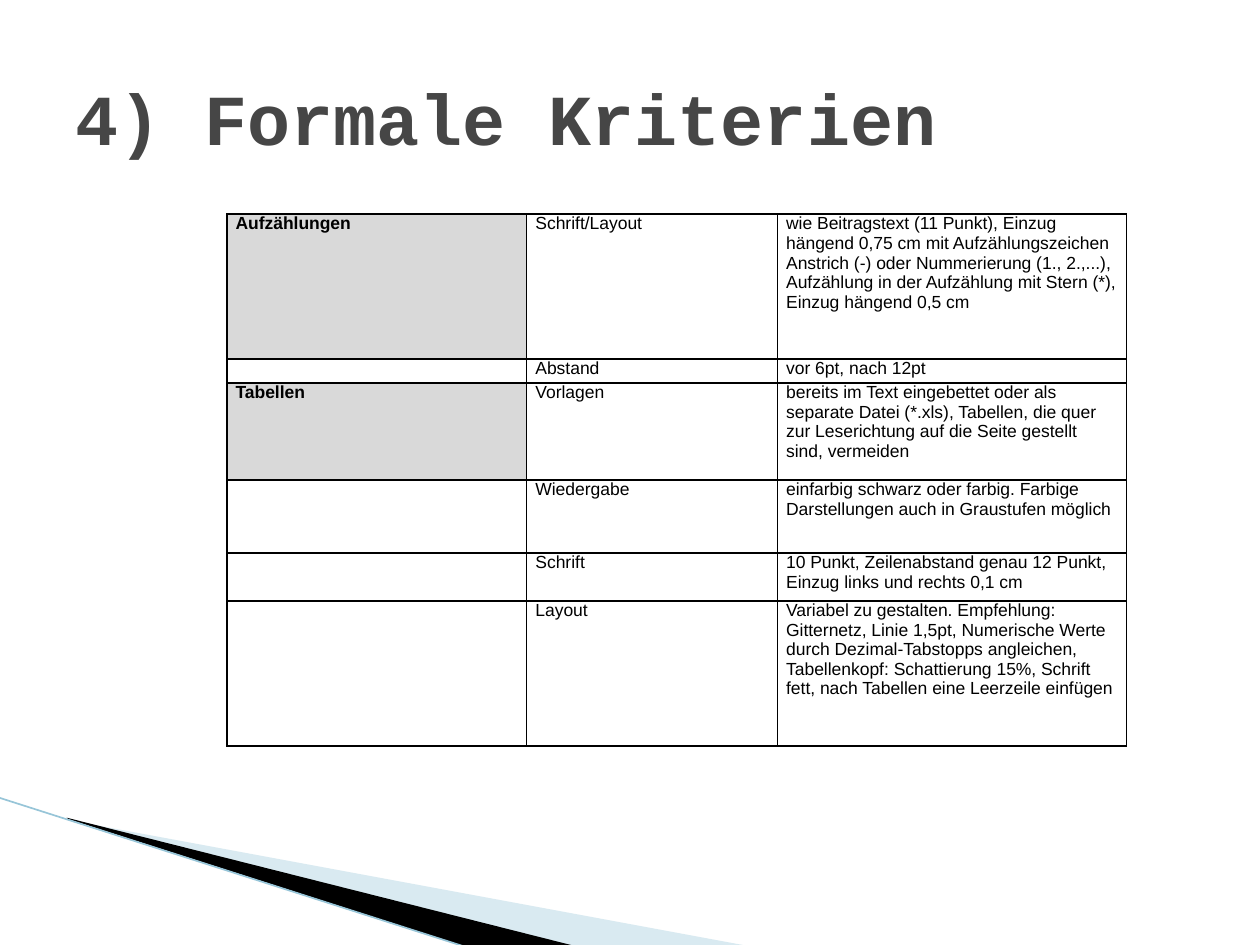
"""Build a slide listing formal criteria for enumerations and tables."""
from dataclasses import dataclass

import lxml.etree
import pptx
import pptx.dml.color
import pptx.enum.shapes
import pptx.enum.text
import pptx.oxml.ns
import pptx.util

Inches = pptx.util.Inches
Pt = pptx.util.Pt
qn = pptx.oxml.ns.qn


@dataclass(frozen=True)
class Criterion:
    topic: str
    aspect: str
    rule: str
    height: float


@dataclass(frozen=True)
class Wedge:
    points: tuple[tuple[float, float], ...]
    color: str
    opacity: int = 100


CRITERIA = [
    Criterion("Aufzählungen", "Schrift/Layout",
              "wie Beitragstext (11 Punkt), Einzug hängend 0,75 cm mit Aufzählungszeichen "
              "Anstrich (-) oder Nummerierung (1., 2.,...), Aufzählung in der Aufzählung "
              "mit Stern (*), Einzug hängend 0,5 cm", 1.15),
    Criterion("", "Abstand", "vor 6pt, nach 12pt", 0.19),
    Criterion("Tabellen", "Vorlagen",
              "bereits im Text eingebettet oder als\nseparate Datei (*.xls), Tabellen, die "
              "quer zur Leserichtung auf die Seite gestellt sind, vermeiden", 0.77),
    Criterion("", "Wiedergabe", "einfarbig schwarz oder farbig. Farbige Darstellungen "
              "auch in Graustufen möglich", 0.58),
    Criterion("", "Schrift", "10 Punkt, Zeilenabstand genau 12 Punkt, "
              "Einzug links und rechts 0,1 cm", 0.38),
    Criterion("", "Layout",
              "Variabel zu gestalten. Empfehlung: Gitternetz, Linie 1,5pt, Numerische Werte "
              "durch Dezimal-Tabstopps angleichen, Tabellenkopf: Schattierung 15%, Schrift "
              "fett, nach Tabellen eine Leerzeile einfügen", 1.15),
]
COLUMN_WIDTHS = [2.38, 1.99, 2.77]
WEDGES = [
    Wedge(((0.55, 6.51), (5.95, 7.51), (4.56, 7.51), (0.55, 6.5)), "A0CBDC", 40),
    Wedge(((0.53, 6.49), (4.57, 7.51), (3.72, 7.52), (0.54, 6.5)), "000000"),
]


def rgb(color: str) -> pptx.dml.color.RGBColor:
    """Turn a hex string into a colour."""
    return pptx.dml.color.RGBColor.from_string(color)


def set_font(paragraph, name: str, size: float, color: str, bold: bool) -> None:
    """Set the font of a whole paragraph."""
    font = paragraph.font
    font.name, font.size, font.bold = name, Pt(size), bold
    font.color.rgb = rgb(color)


def add_wedge(slide, wedge: Wedge) -> None:
    """Draw one filled wedge without an outline."""
    builder = slide.shapes.build_freeform(*map(Inches, wedge.points[0]), scale=1.0)
    builder.add_line_segments([tuple(map(Inches, point)) for point in wedge.points[1:]])
    shape = builder.convert_to_shape()
    shape.shadow.inherit = False
    shape.line.fill.background()
    shape.fill.solid()
    shape.fill.fore_color.rgb = rgb(wedge.color)
    if wedge.opacity < 100:
        color = shape.fill._xPr.find(".//" + qn("a:srgbClr"))
        lxml.etree.SubElement(color, qn("a:alpha"), val=str(wedge.opacity * 1000))


def add_edge_line(slide) -> None:
    """Draw the thin line along the wedges."""
    line = slide.shapes.add_connector(
        pptx.enum.shapes.MSO_CONNECTOR.STRAIGHT,
        Inches(-0.01), Inches(6.33), Inches(3.71), Inches(7.52))
    line.line.color.rgb = rgb("97C5D8")
    line.line.width = Pt(0.95)
    lxml.etree.SubElement(line._element.spPr, qn("a:effectLst"))


def add_borders(cell) -> None:
    """Give a cell black one-point borders ahead of its fill."""
    properties = cell._tc.get_or_add_tcPr()
    for index, side in enumerate(("lnL", "lnR", "lnT", "lnB")):
        border = lxml.etree.Element(qn(f"a:{side}"), w=str(Pt(1)))
        fill = lxml.etree.SubElement(border, qn("a:solidFill"))
        lxml.etree.SubElement(fill, qn("a:srgbClr"), val="000000")
        properties.insert(index, border)


def fill_cell(cell, text: str, heading: bool) -> None:
    """Write and format one table cell."""
    cell.text = text
    cell.margin_left = cell.margin_right = Inches(0.07)
    cell.margin_top = cell.margin_bottom = 0
    if heading:
        cell.fill.solid()
        cell.fill.fore_color.rgb = rgb("D9D9D9")
    else:
        cell.fill.background()
    add_borders(cell)
    for paragraph in cell.text_frame.paragraphs:
        set_font(paragraph, "Arial", 10, "000000", heading)
        if not text:
            lxml.etree.SubElement(paragraph._p, qn("a:endParaRPr"), sz="1000")


def add_criteria_table(slide) -> None:
    """Draw the table of criteria."""
    table = slide.shapes.add_table(
        len(CRITERIA), len(COLUMN_WIDTHS), Inches(1.8), Inches(1.7),
        Inches(sum(COLUMN_WIDTHS)), Inches(sum(item.height for item in CRITERIA))).table
    table.first_row = table.horz_banding = False
    for column, width in zip(table.columns, COLUMN_WIDTHS):
        column.width = Inches(width)
    for row, item in zip(table.rows, CRITERIA):
        row.height = Inches(item.height)
        for index, text in enumerate((item.topic, item.aspect, item.rule)):
            fill_cell(row.cells[index], text, index == 0 and bool(text))


def add_title(slide) -> None:
    """Write the slide title."""
    box = slide.shapes.add_textbox(Inches(0.5), Inches(0.3), Inches(9), Inches(1.25))
    frame = box.text_frame
    frame.word_wrap = True
    frame.vertical_anchor = pptx.enum.text.MSO_ANCHOR.MIDDLE
    frame.text = "4) Formale Kriterien"
    set_font(frame.paragraphs[0], "Courier New", 41, "464646", True)


def main() -> None:
    """Build and save the presentation."""
    presentation = pptx.Presentation()
    presentation.slide_width, presentation.slide_height = Inches(10), Inches(7.5)
    slide = presentation.slides.add_slide(presentation.slide_layouts[6])
    for wedge in WEDGES:
        add_wedge(slide, wedge)
    add_edge_line(slide)
    add_criteria_table(slide)
    add_title(slide)
    presentation.save("out.pptx")


if __name__ == "__main__":
    main()
